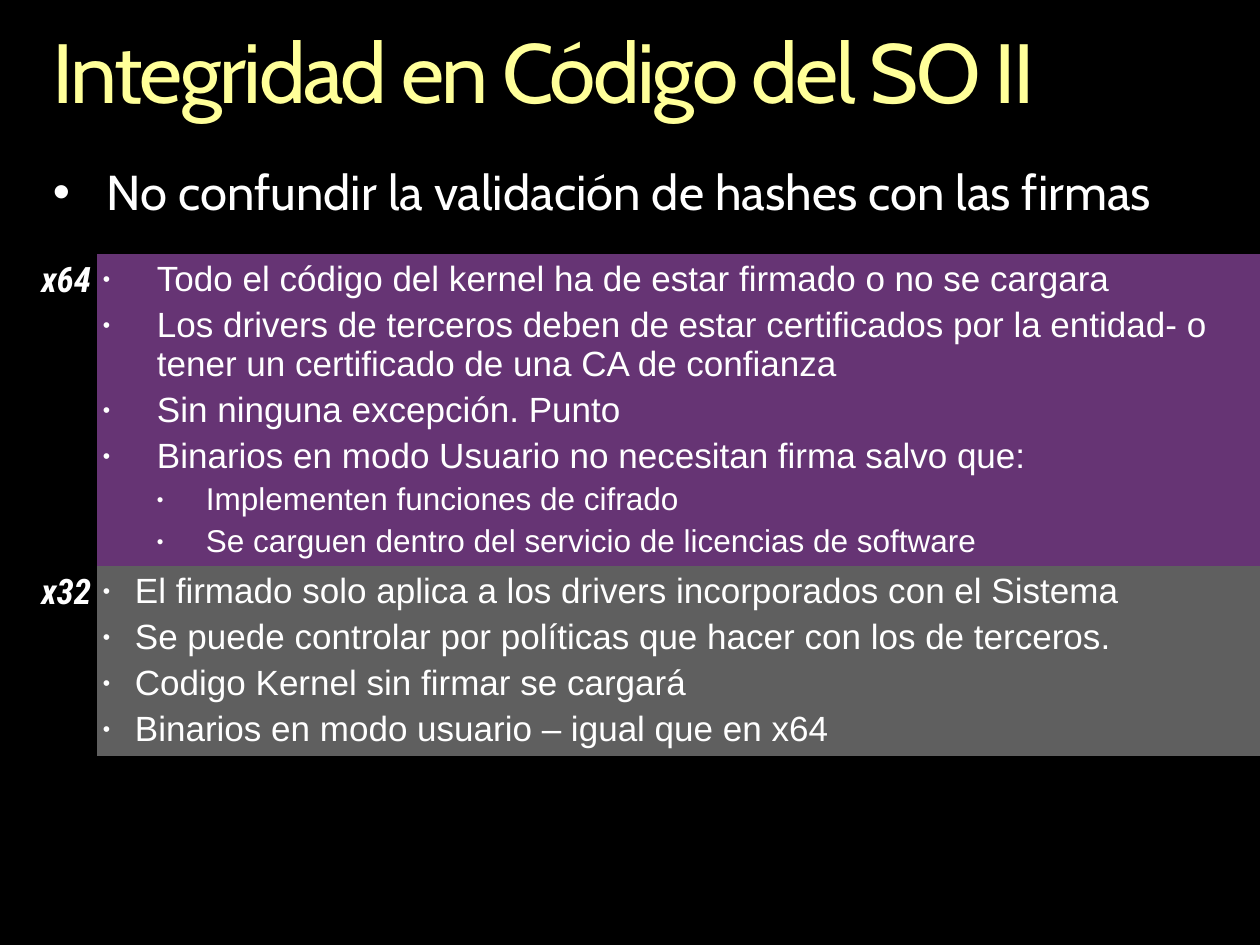
import pptx
import pptx.dml.color
import pptx.enum.text
import pptx.oxml.ns
import pptx.util
from lxml import etree

NO_GRID_STYLE = "{2D5ABB26-0587-4C30-8999-92F81FD0307C}"
X64_RULES = [
    ("Todo el código del kernel ha de estar firmado o no se cargara", 0),
    ("Los drivers de terceros deben de estar certificados por la entidad- o "
     "tener un certificado de una CA de confianza", 0),
    ("Sin ninguna excepción. Punto", 0),
    ("Binarios en modo Usuario no necesitan firma salvo que:", 0),
    ("Implementen funciones de cifrado", 1),
    ("Se carguen dentro del servicio de licencias de software", 1),
]
X32_RULES = [
    ("El firmado solo aplica a los drivers incorporados con el Sistema", 0),
    ("Se puede controlar por políticas que hacer con los de terceros.", 0),
    ("Codigo Kernel sin firmar se cargará", 0),
    ("Binarios en modo usuario – igual que en x64", 0),
]
ARCHITECTURES = [
    ("x64", X64_RULES, "663474", 312, [(54, 54), (103, 49)]),
    ("x32", X32_RULES, "5F5F5F", 190, [(32, 32)]),
]


def px(length):
    return pptx.util.Emu(round(length * 914400 / 126))


def color(value):
    return pptx.dml.color.RGBColor.from_string(value)


def add_bullet(paragraph, left, hanging, percent):
    properties = paragraph._p.get_or_add_pPr()
    properties.set("marL", str(px(left)))
    properties.set("indent", str(-px(hanging)))
    for tag, attribute, value in (("a:buSzPct", "val", str(percent * 1000)),
                                  ("a:buFont", "typeface", "Arial"),
                                  ("a:buChar", "char", "•")):
        etree.SubElement(properties, pptx.oxml.ns.qn(tag)).set(attribute, value)


def write(frame, text, size, font="Arial", fill="FFFFFF", bold=False, italic=False,
          align=pptx.enum.text.PP_ALIGN.LEFT, line=1.0, before=0, level=0,
          bullet=None, bullet_percent=100, spacing=0):
    first = not frame.paragraphs[0].runs
    paragraph = frame.paragraphs[0] if first else frame.add_paragraph()
    paragraph.level = level
    if bullet:
        add_bullet(paragraph, *bullet, bullet_percent)
    paragraph.alignment = align
    paragraph.line_spacing = line
    paragraph.space_before = pptx.util.Pt(0 if first else before)
    run = paragraph.add_run()
    run.text = text
    run.font.name = font
    run.font.size = pptx.util.Pt(size)
    run.font.bold = bold
    run.font.italic = italic
    run.font.color.rgb = color(fill)
    if spacing:
        run.font._element.set("spc", str(round(spacing * 100)))


def prepare_frame(frame):
    frame.word_wrap = True
    frame.auto_size = pptx.enum.text.MSO_AUTO_SIZE.NONE
    frame.vertical_anchor = pptx.enum.text.MSO_ANCHOR.TOP
    frame.margin_left = frame.margin_right = frame.margin_top = frame.margin_bottom = 0


def place_title(slide, left, top, width, height):
    title = slide.shapes.title
    title.left, title.top, title.width, title.height = map(px, (left, top, width, height))
    prepare_frame(title.text_frame)
    write(title.text_frame, "Integridad en Código del SO II", size=48, font="Cabin",
          fill="FFFF99", line=0.9, spacing=-1.5)


def place_statement(slide, left, top, width, height):
    statement = slide.shapes.add_textbox(*map(px, (left, top, width, height)))
    prepare_frame(statement.text_frame)
    write(statement.text_frame, "No confundir la validación de hashes con las firmas",
          size=28, font="Cabin", line=0.9, bullet=(54, 54))


def place_architectures(slide, left, top, width, label_width):
    height = sum(row_height for _, _, _, row_height, _ in ARCHITECTURES)
    table = slide.shapes.add_table(len(ARCHITECTURES), 2,
                                   *map(px, (left, top, width, height))).table
    table.first_row = table.horz_banding = False
    table._tbl.tblPr.find(pptx.oxml.ns.qn("a:tableStyleId")).text = NO_GRID_STYLE
    table.columns[0].width = px(label_width)
    table.columns[1].width = px(width - label_width)
    for index, (label, rules, fill, row_height, indents) in enumerate(ARCHITECTURES):
        table.rows[index].height = px(row_height)
        label_cell, rules_cell = table.rows[index].cells
        for cell in (label_cell, rules_cell):
            cell.margin_left = cell.margin_right = px(6)
            cell.margin_top = cell.margin_bottom = px(6)
        label_cell.fill.background()
        rules_cell.fill.solid()
        rules_cell.fill.fore_color.rgb = color(fill)
        write(label_cell.text_frame, label, size=20, font="Roboto Condensed",
              bold=True, italic=True, align=pptx.enum.text.PP_ALIGN.RIGHT)
        for rule, level in rules:
            size = 20 - 2 * level
            write(rules_cell.text_frame, rule, size=size, before=size * 0.2,
                  level=level, bullet=indents[level], bullet_percent=60)


def main():
    presentation = pptx.Presentation()
    presentation.slide_width, presentation.slide_height = px(1260), px(945)
    slide = presentation.slides.add_slide(presentation.slide_layouts[5])
    slide.background.fill.solid()
    slide.background.fill.fore_color.rgb = color("000000")
    place_title(slide, 53, 31, 1155, 92)
    place_statement(slide, 53, 168, 1207, 118)
    place_architectures(slide, 25, 254, 1235, label_width=72)
    presentation.save("out.pptx")


if __name__ == "__main__":
    main()
